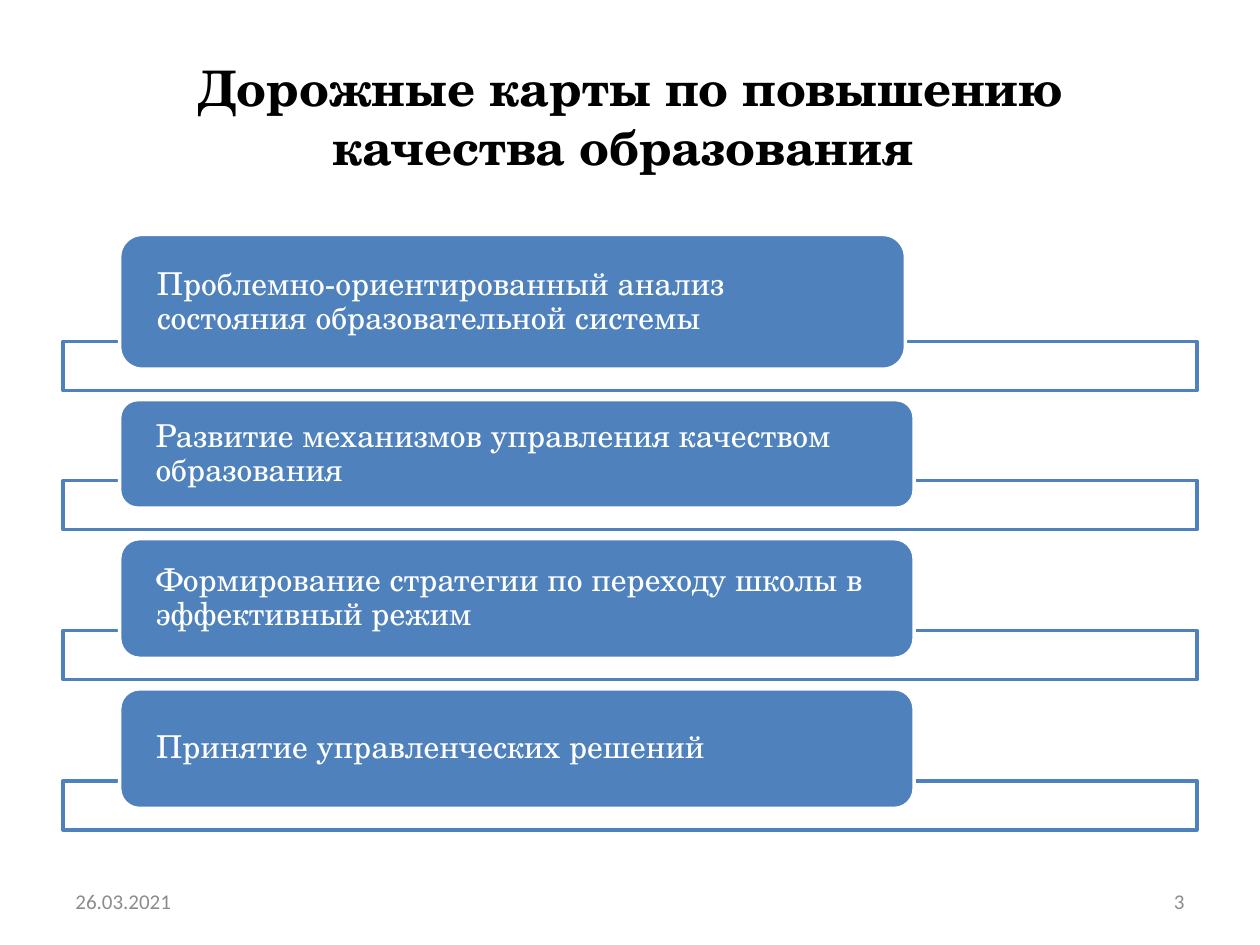
from lxml.etree import SubElement
from pptx import Presentation
from pptx.dml.color import RGBColor
from pptx.enum.shapes import MSO_SHAPE as Shape
from pptx.enum.text import MSO_ANCHOR as Anchor, PP_ALIGN as Align
from pptx.oxml.ns import qn
from pptx.util import Pt

SERIF = "TeX Gyre Schola"
BLUE, WHITE, BLACK, GREY = "4F81BD", "FFFFFF", "000000", "8C8C8C"
MARGIN, CONTENT_WIDTH = 36, 648
BAR_HEIGHT, BAR_OVERLAP, ROW_GAP = 28, 15.8, 5.2
STEPS = [
    ("Проблемно-ориентированный анализ состояния образовательной системы", 449, 77),
    ("Развитие механизмов управления качеством образования", 454, 62),
    ("Формирование стратегии по переходу школы в эффективный режим", 454, 68.4),
    ("Принятие управленческих решений", 454, 68.4),
]


def color(value):
    """Turn a hex string into a colour."""
    return RGBColor.from_string(value)


def write(shape, text, size, hue, font=SERIF, align=Align.LEFT, bold=False):
    """Put one formatted, vertically centred paragraph into a shape."""
    frame = shape.text_frame
    frame.word_wrap = True
    frame.vertical_anchor = Anchor.MIDDLE
    frame.text = text
    paragraph = frame.paragraphs[0]
    paragraph.alignment = align
    paragraph.font.name = font
    paragraph.font.size = Pt(size)
    paragraph.font.bold = bold
    paragraph.font.color.rgb = color(hue)
    return paragraph


def add_block(slide, kind, left, top, width, height, fill, line):
    """Add a filled and outlined preset shape without shadow."""
    shape = slide.shapes.add_shape(kind, Pt(left), Pt(top), Pt(width), Pt(height))
    shape.shadow.inherit = False
    shape.fill.solid()
    shape.fill.fore_color.rgb = color(fill)
    shape.line.color.rgb = color(line)
    shape.line.width = Pt(2)
    return shape


def add_bar(slide, top):
    """Add the slightly transparent full-width bar behind a step."""
    bar = add_block(slide, Shape.RECTANGLE, MARGIN, top, CONTENT_WIDTH, BAR_HEIGHT, WHITE, BLUE)
    fill_color = bar._element.spPr.find(qn("a:solidFill"))[0]
    SubElement(fill_color, qn("a:alpha")).set("val", "90000")


def add_step(slide, text, top, width, height):
    """Add the rounded box that names a step."""
    box = add_block(slide, Shape.ROUNDED_RECTANGLE, 68.4, top, width, height, BLUE, WHITE)
    paragraph = write(box, text, 18, WHITE)
    paragraph.line_spacing = 0.9
    frame = box.text_frame
    frame.margin_left = frame.margin_right = Pt(17.5)
    frame.margin_top = frame.margin_bottom = 0


def add_footer(slide, text, left, align):
    """Add a small grey text at the foot of the slide."""
    box = slide.shapes.add_textbox(Pt(left), Pt(500.5), Pt(168), Pt(28.75))
    write(box, text, 12, GREY, "Calibri", align)


def add_title(slide, text):
    """Place and format the title placeholder."""
    title = slide.shapes.title
    title.left, title.top = Pt(MARGIN), Pt(21.6)
    title.width, title.height = Pt(CONTENT_WIDTH), Pt(90)
    write(title, text, 28, BLACK, align=Align.CENTER, bold=True)


def main():
    """Build and save the slide."""
    presentation = Presentation()
    presentation.slide_width, presentation.slide_height = Pt(720), Pt(540)
    slide = presentation.slides.add_slide(presentation.slide_layouts[5])
    add_title(slide, "Дорожные карты по повышению качества образования ")
    top = 134
    for text, width, height in STEPS:
        bar_top = top + height - BAR_OVERLAP
        add_bar(slide, bar_top)
        add_step(slide, text, top, width, height)
        top = bar_top + BAR_HEIGHT + ROW_GAP
    add_footer(slide, "26.03.2021", MARGIN, Align.LEFT)
    add_footer(slide, "3", 516, Align.RIGHT)
    presentation.save("out.pptx")


if __name__ == "__main__":
    main()
